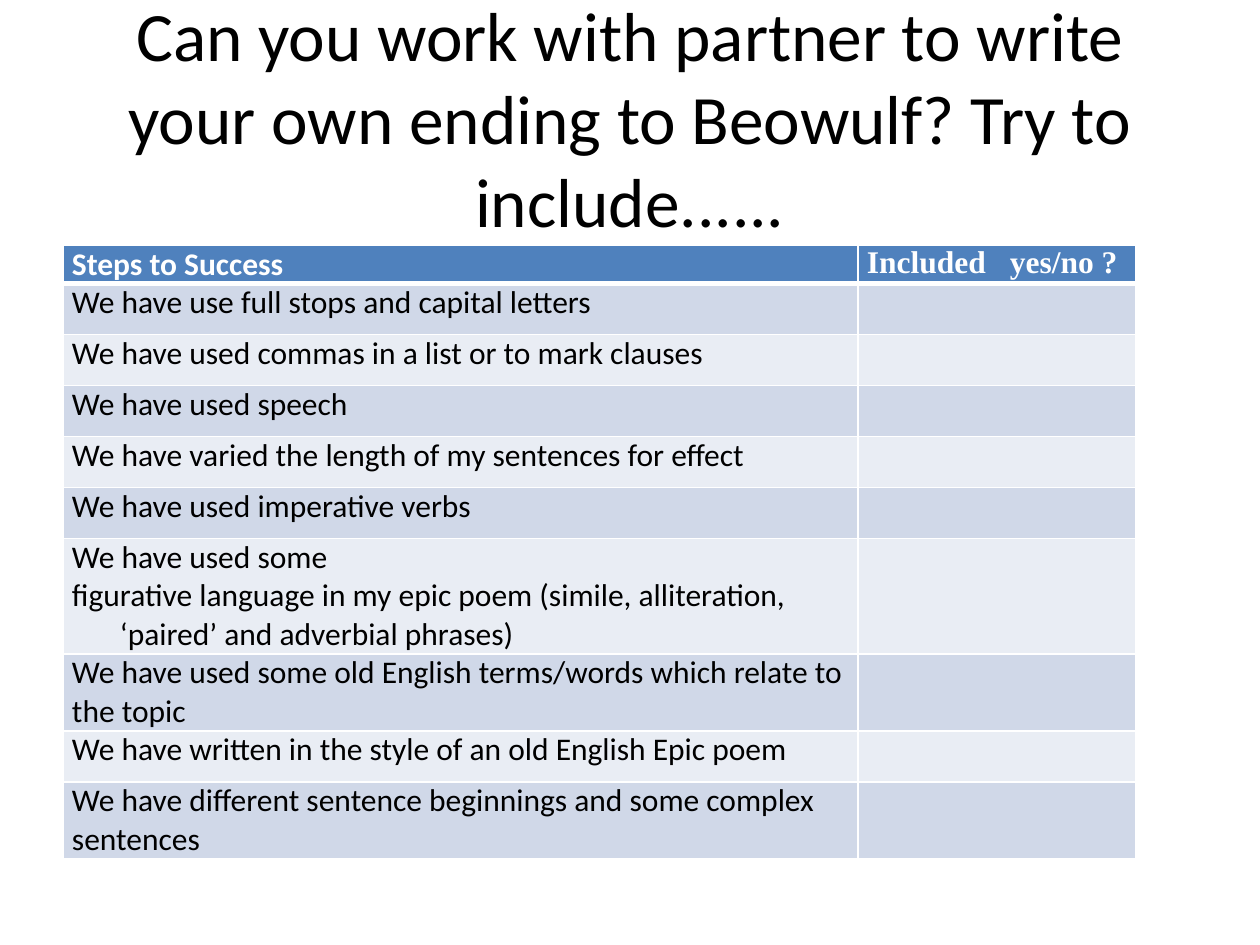
import pptx
import pptx.dml.color
import pptx.enum.text
import pptx.oxml
import pptx.oxml.ns
import pptx.util

EMU_PER_PX = 914400 / 126
TITLE = "Can you work with partner to write your own ending to Beowulf? Try to include......"
STEPS = [
    ["We have use full stops and capital letters"],
    ["We have used commas in a list or to mark clauses"],
    ["We have used speech"],
    ["We have varied the length of my sentences for effect"],
    ["We have used imperative verbs"],
    ["We have used some",
     "figurative language in my epic poem (simile, alliteration, ‘paired’ and adverbial phrases)"],
    ["We have used some old English terms/words which relate to the topic"],
    ["We have written in the style of an old English Epic poem"],
    ["We have different sentence beginnings and some complex sentences"],
]


def px(length):
    return pptx.util.Emu(round(length * EMU_PER_PX))


def color(value):
    return pptx.dml.color.RGBColor.from_string(value)


class SlideBuilder:
    font = "Calibri"
    header_font = "Times New Roman"
    text_color = "000000"
    line_color = "FFFFFF"
    header_fill = "4F81BD"
    band_fills = ("D0D8E8", "E9EDF4")
    body_size = 18

    def __init__(self, presentation):
        self.slide = presentation.slides.add_slide(presentation.slide_layouts[5])

    def run(self, paragraph, text, size, value, font=None, bold=False):
        run = paragraph.add_run()
        run.text = text
        run.font.name = font or self.font
        run.font.size = pptx.util.Pt(size)
        run.font.bold = bold
        run.font.color.rgb = color(value)

    def title(self, text, left, top, width, height):
        shape = self.slide.shapes.title
        shape.left, shape.top, shape.width, shape.height = map(px, (left, top, width, height))
        frame = shape.text_frame
        frame.word_wrap = True
        frame.auto_size = pptx.enum.text.MSO_AUTO_SIZE.NONE
        frame.vertical_anchor = pptx.enum.text.MSO_ANCHOR.MIDDLE
        paragraph = frame.paragraphs[0]
        paragraph.alignment = pptx.enum.text.PP_ALIGN.CENTER
        self.run(paragraph, text, 39.6, self.text_color)

    def table(self, left, top, columns, rows):
        shape = self.slide.shapes.add_table(
            len(rows), len(columns), px(left), px(top), px(sum(columns)), px(sum(rows)))
        table = shape.table
        for column, width in zip(table.columns, columns):
            column.width = px(width)
        for row, height in zip(table.rows, rows):
            row.height = px(height)
        return table

    def borders(self, cell, bottom, top):
        properties = cell._tc.get_or_add_tcPr()
        for side, points in (("L", 1), ("R", 1), ("T", top), ("B", bottom)):
            properties.append(pptx.oxml.parse_xml(
                f'<a:ln{side} {pptx.oxml.ns.nsdecls("a")} w="{pptx.util.Pt(points)}">'
                f'<a:solidFill><a:srgbClr val="{self.line_color}"/></a:solidFill></a:ln{side}>'))

    def cell(self, cell, fill, bottom=1, top=1):
        self.borders(cell, bottom, top)
        cell.fill.solid()
        cell.fill.fore_color.rgb = color(fill)
        cell.margin_left = cell.margin_right = px(9)
        cell.margin_top = cell.margin_bottom = 0
        return cell.text_frame

    def indent(self, paragraph, length):
        properties = paragraph._p.get_or_add_pPr()
        properties.set("marL", str(px(length)))
        properties.set("indent", str(-px(length)))

    def tab_stop(self, paragraph, position):
        paragraph._p.get_or_add_pPr().append(pptx.oxml.parse_xml(
            f'<a:tabLst {pptx.oxml.ns.nsdecls("a")}>'
            f'<a:tab pos="{px(position)}" algn="l"/></a:tabLst>'))

    def header(self, table):
        headings = (("Steps to Success", self.font), ("Included\tyes/no ?", self.header_font))
        for index, (text, font) in enumerate(headings):
            paragraph = self.cell(table.cell(0, index), self.header_fill, bottom=3).paragraphs[0]
            if "\t" in text:
                self.tab_stop(paragraph, 143)
            self.run(paragraph, text, self.body_size, self.line_color, font, True)

    def step(self, table, row, lines):
        fill = self.band_fills[(row - 1) % 2]
        top = 3 if row == 1 else 1
        frame = self.cell(table.cell(row, 0), fill, top=top)
        self.cell(table.cell(row, 1), fill, top=top)
        for index, text in enumerate(lines):
            paragraph = frame.add_paragraph() if index else frame.paragraphs[0]
            if len(lines) > 1:
                self.indent(paragraph, 48)
            self.run(paragraph, text, self.body_size, self.text_color)


def main():
    presentation = pptx.Presentation()
    presentation.slide_width = px(1260)
    presentation.slide_height = px(945)
    builder = SlideBuilder(presentation)
    builder.title(TITLE, 63, 38, 1134, 158)
    table = builder.table(63, 245, [795, 278], [28] + [51] * len(STEPS))
    builder.header(table)
    for row, lines in enumerate(STEPS, start=1):
        builder.step(table, row, lines)
    presentation.save("out.pptx")


if __name__ == "__main__":
    main()
